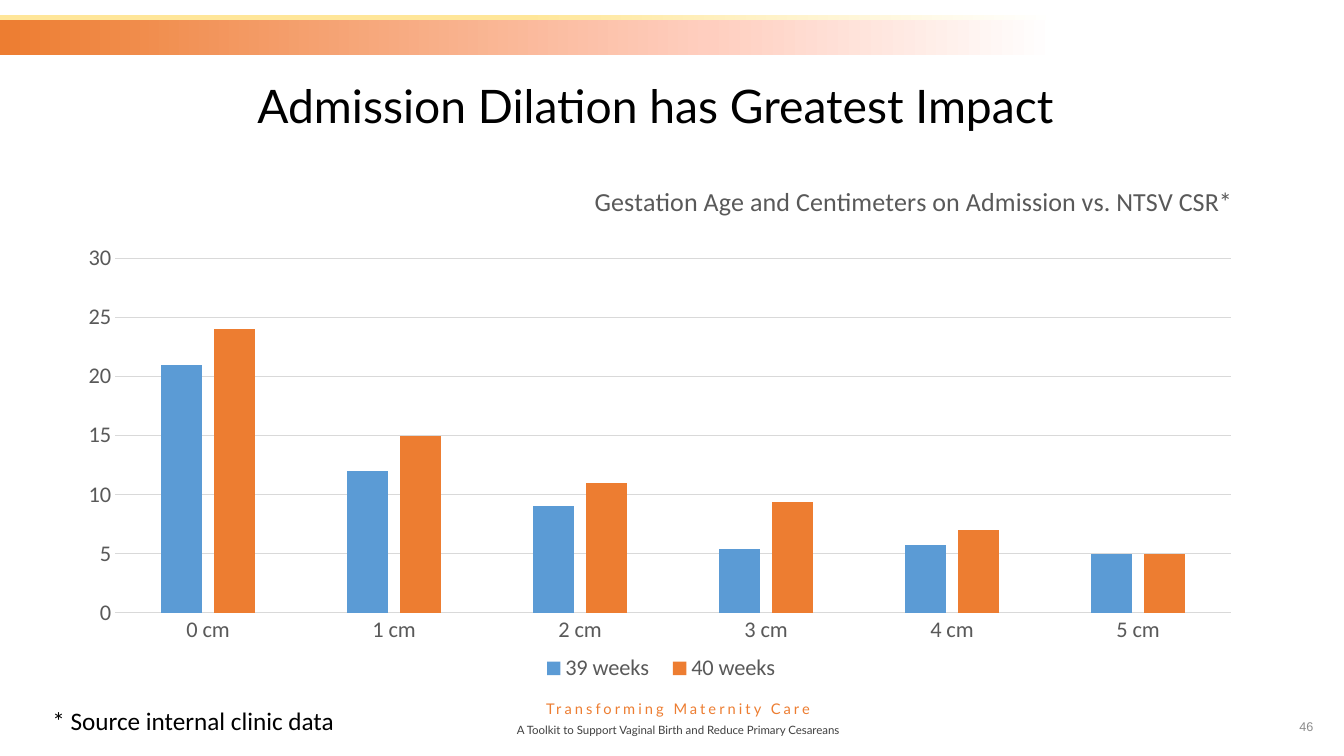
from lxml import etree
from pptx import Presentation
from pptx.chart.data import CategoryChartData
from pptx.dml.color import RGBColor
from pptx.enum.chart import XL_CHART_TYPE, XL_LEGEND_POSITION, XL_TICK_MARK
from pptx.enum.shapes import MSO_SHAPE
from pptx.enum.text import MSO_ANCHOR, PP_ALIGN
from pptx.oxml.ns import qn
from pptx.util import Cm, Pt

COLUMNS = XL_CHART_TYPE.COLUMN_CLUSTERED
BOTTOM = XL_LEGEND_POSITION.BOTTOM
NO_TICK = XL_TICK_MARK.NONE
RECT = MSO_SHAPE.RECTANGLE
MIDDLE = MSO_ANCHOR.MIDDLE
LEFT, CENTER, RIGHT = PP_ALIGN.LEFT, PP_ALIGN.CENTER, PP_ALIGN.RIGHT

COLORS = {
    "blue": "5B9BD5", "orange": "ED7D31", "peach": "FFCEBF",
    "yellow": "FFE699", "white": "FFFFFF", "black": "000000",
    "dark": "404040", "gray": "595959", "number": "8C8C8C", "grid": "D9D9D9",
}
WEEKS = {
    "39 weeks": ("blue", (21, 12, 9, 5.4, 5.7, 5)),
    "40 weeks": ("orange", (24, 15, 11, 9.4, 7, 5)),
}


def rgb(name):
    return RGBColor.from_string(COLORS[name])


def set_font(font, size, color, name="Calibri"):
    font.size = Pt(size)
    font.name = name
    font.bold = False
    font.color.rgb = rgb(color)


def add_band(slide, x, y, w, h, stops):
    sp = slide.shapes.add_shape(RECT, Cm(x), Cm(y), Cm(w), Cm(h))
    sp.shadow.inherit = False
    sp.line.fill.background()
    sp.fill.gradient()
    sp.fill.gradient_angle = 0
    gs_list = sp._element.spPr.find(".//" + qn("a:gsLst"))
    for gs in list(gs_list):
        gs_list.remove(gs)
    for pos, color in stops:
        gs = etree.SubElement(gs_list, qn("a:gs"), pos=str(pos * 1000))
        etree.SubElement(gs, qn("a:srgbClr"), val=COLORS[color])


def add_header(slide, x, y, w, h):
    add_band(slide, x, y, w, 0.28, [(0, "yellow"), (50, "yellow"), (100, "white")])
    add_band(slide, x, y + 0.13, w, h - 0.13, [(0, "orange"), (67, "peach"), (100, "white")])


def add_title(slide, x, y, w, h):
    sp = slide.shapes.title
    sp.left, sp.top, sp.width, sp.height = Cm(x), Cm(y), Cm(w), Cm(h)
    tf = sp.text_frame
    tf.text = "Admission Dilation has Greatest Impact"
    tf.vertical_anchor = MIDDLE
    p = tf.paragraphs[0]
    p.alignment = CENTER
    p.line_spacing = 0.9
    set_font(p.runs[0].font, 33, "black", "Lato")


def add_text(slide, x, y, w, h, lines, align, wrap=True):
    tf = slide.shapes.add_textbox(Cm(x), Cm(y), Cm(w), Cm(h)).text_frame
    tf.word_wrap = wrap
    tf.text = "\n".join(line[0] for line in lines)
    for p, (_, *style) in zip(tf.paragraphs, lines):
        p.alignment = align
        set_font(p.runs[0].font, *style)
    return tf


def add_footer(slide, x, y, w, h):
    lines = [
        ("Transforming Maternity Care", 10.5, "orange", "Lato"),
        ("A Toolkit to Support Vaginal Birth and Reduce Primary Cesareans", 8.2, "dark", "Lato"),
    ]
    tf = add_text(slide, x, y, w, h, lines, CENTER)
    tf.paragraphs[0].runs[0].font._element.set("spc", "220")
    tf.paragraphs[1].space_before = Pt(4)
    number = add_text(slide, x + w - 8.2, y + 0.3, 7.62, 1.02,
                      [("46", 9, "number", "Arial")], RIGHT)
    number.vertical_anchor = MIDDLE
    number.margin_left = number.margin_right = Cm(0.18)
    add_text(slide, x + 0.74, y + 0.15, 8.48, 1.02,
             [("* Source internal clinic data", 18, "black")], LEFT, wrap=False)


def set_layout(parent, index, **values):
    layout = parent.find(qn("c:layout"))
    if layout is None:
        layout = etree.Element(qn("c:layout"))
        parent.insert(index, layout)
    manual = etree.SubElement(layout, qn("c:manualLayout"))
    for tag, val in values.items():
        etree.SubElement(manual, qn("c:" + tag), val=str(val))


def add_dilation_chart(slide, x, y, w, h):
    data = CategoryChartData()
    data.categories = [f"{cm} cm" for cm in range(6)]
    for name, (_, values) in WEEKS.items():
        data.add_series(name, values)
    chart = slide.shapes.add_chart(COLUMNS, Cm(x), Cm(y), Cm(w), Cm(h), data).chart
    set_font(chart.font, 16, "gray")

    chart.has_title = True
    tf = chart.chart_title.text_frame
    tf.text = "Gestation Age and Centimeters on Admission vs. NTSV CSR*"
    set_font(tf.paragraphs[0].runs[0].font, 18.6, "gray")

    chart.has_legend = True
    chart.legend.position = BOTTOM
    chart.legend.include_in_layout = False
    set_font(chart.legend.font, 16, "gray")

    space = chart._chartSpace
    edge = {"xMode": "edge", "yMode": "edge"}
    set_layout(space.find(".//" + qn("c:title")), 1, **edge, x=0.44, y=0.02)
    set_layout(space.find(".//" + qn("c:plotArea")), 0, layoutTarget="inner",
               **edge, x=0.04, y=0.17, w=0.94, h=0.67)
    set_layout(space.find(".//" + qn("c:legend")), 1, **edge, x=0.39, y=0.91, w=0.22, h=0.07)

    plot = chart.plots[0]
    plot.gap_width = 219
    plot.overlap = -27
    plot.vary_by_categories = False
    for series, (color, _) in zip(plot.series, WEEKS.values()):
        series.format.fill.solid()
        series.format.fill.fore_color.rgb = rgb(color)

    for axis in (chart.category_axis, chart.value_axis):
        axis.major_tick_mark = axis.minor_tick_mark = NO_TICK
        set_font(axis.tick_labels.font, 16, "gray")
    value_axis = chart.value_axis
    value_axis.minimum_scale, value_axis.maximum_scale = 0, 30
    value_axis.major_unit = 5
    value_axis.format.line.fill.background()
    for line in (chart.category_axis.format.line, value_axis.major_gridlines.format.line):
        line.color.rgb = rgb("grid")
        line.width = Pt(0.75)


def main():
    prs = Presentation()
    prs.slide_width, prs.slide_height = Cm(33.87), Cm(19.05)
    slide = prs.slides.add_slide(prs.slide_layouts[5])
    add_header(slide, 0, 0.38, 26.62, 1.02)
    add_footer(slide, 0.33, 17.5, 33.53, 1.24)
    add_dilation_chart(slide, 1.7, 4.24, 29.92, 13.34)
    add_title(slide, 1.42, 1.45, 30.2, 2.57)
    prs.save("out.pptx")


if __name__ == "__main__":
    main()
